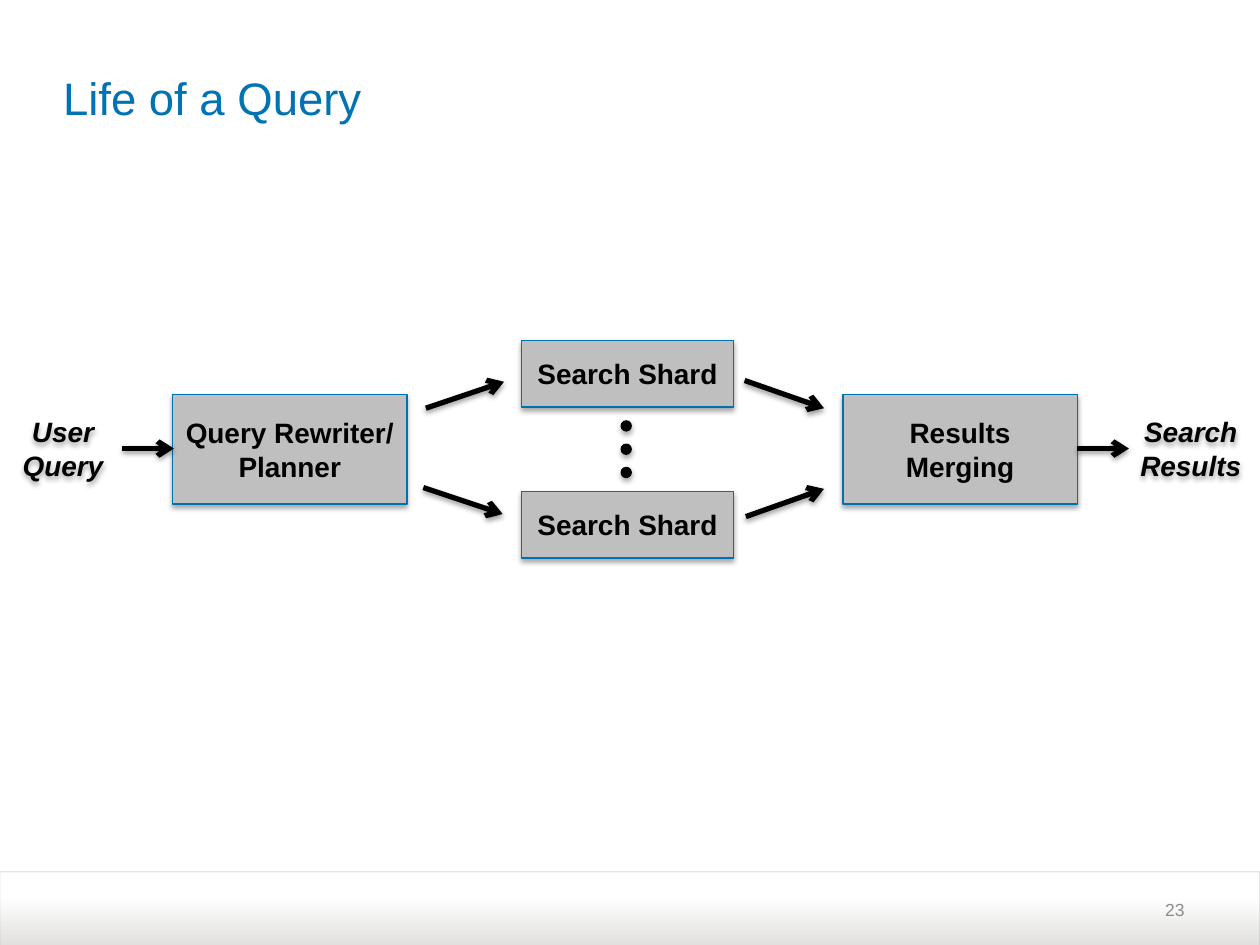
from lxml.etree import SubElement
from pptx import Presentation
from pptx.dml.color import RGBColor
from pptx.enum.shapes import MSO_CONNECTOR, MSO_SHAPE
from pptx.enum.text import MSO_ANCHOR, PP_ALIGN
from pptx.oxml.ns import qn
from pptx.util import Inches, Pt

COLORS = {
    "title": "0073B2",
    "border": "0070AE",
    "box": "BFBFBF",
    "ink": "000000",
    "number": "8C8C8C",
    "footer_dark": "E1E0DF",
    "footer_light": "FFFFFF",
    "footer_line": "A6A6A6",
}
PALETTE = {name: RGBColor.from_string(value) for name, value in COLORS.items()}

deck = Presentation()
deck.slide_width, deck.slide_height = Inches(10), Inches(7.5)
COLUMN = deck.slide_width / 100
ROW = deck.slide_height / 75
page = deck.slides.add_slide(deck.slide_layouts[5])


def grid(left, top, width, height):
    return [round(value * unit) for value, unit in
            zip((left, top, width, height), (COLUMN, ROW, COLUMN, ROW))]


def write(box, lines, size, color, align, bold=False, italic=False):
    frame = box.text_frame
    frame.vertical_anchor = MSO_ANCHOR.MIDDLE
    para = frame.paragraphs[0]
    para.alignment = align
    for index, line in enumerate(lines):
        if index:
            para.add_line_break()
        span = para.add_run()
        span.text = line
        span.font.name = "Arial"
        span.font.size = Pt(size)
        span.font.bold = bold
        span.font.italic = italic
        span.font.color.rgb = PALETTE[color]


footer = page.shapes.add_shape(MSO_SHAPE.ROUND_2_SAME_RECTANGLE, *grid(0, 69.2, 100, 5.9))
footer.adjustments[0] = 0
footer.shadow.inherit = False
footer.fill.gradient()
footer.fill.gradient_angle = 90
for stop, color, position in zip(footer.fill.gradient_stops, ("footer_dark", "footer_light"), (0, 0.68)):
    stop.color.rgb = PALETTE[color]
    stop.position = position
footer.line.color.rgb = PALETTE["footer_line"]
footer.line.width = Pt(0.25)
line_color = footer.line._get_or_add_ln().find(".//" + qn("a:srgbClr"))
SubElement(line_color, qn("a:alpha"), val="79000")

title = page.shapes.title
title.left, title.top, title.width, title.height = grid(5, 2.2, 90, 11)
title.text_frame.margin_left = title.text_frame.margin_right = 0
write(title, ["Life of a Query"], 26, "title", PP_ALIGN.LEFT)

number = page.shapes.add_textbox(*grid(71.7, 70.2, 23.3, 4))
number.text_frame.word_wrap = True
write(number, ["23"], 10, "number", PP_ALIGN.RIGHT)

shadowed = []
stages = [
    (["Query Rewriter/", "Planner"], (13.7, 31.3, 18.6, 8.7)),
    (["Results", "Merging"], (66.9, 31.3, 18.6, 8.7)),
    (["Search Shard"], (41.4, 27, 16.8, 5.3)),
    (["Search Shard"], (41.4, 39, 16.8, 5.3)),
]
for lines, place in stages:
    stage = page.shapes.add_shape(MSO_SHAPE.RECTANGLE, *grid(*place))
    stage.fill.solid()
    stage.fill.fore_color.rgb = PALETTE["box"]
    stage.line.color.rgb = PALETTE["border"]
    stage.line.width = Pt(0.75)
    stage.text_frame.word_wrap = False
    write(stage, lines, 16, "ink", PP_ALIGN.CENTER, bold=True)
    shadowed.append(stage)

for lines, left, width in [(["User", "Query"], 0.3, 9.4), (["Search", "Results"], 89.4, 10.2)]:
    label = page.shapes.add_textbox(*grid(left, 31.4, width, 8.4))
    label.text_frame.word_wrap = False
    write(label, lines, 16, "ink", PP_ALIGN.CENTER, bold=True, italic=True)
    shadowed.append(label)

for index in range(3):
    dot = page.shapes.add_shape(MSO_SHAPE.OVAL, *grid(49.3, 33.4 + 1.85 * index, 0.8, 0.8))
    dot.fill.solid()
    dot.fill.fore_color.rgb = PALETTE["ink"]
    dot.line.color.rgb = PALETTE["ink"]
    dot.line.width = Pt(0.75)
    shadowed.append(dot)

arrows = [
    (9.7, 35.6, 13.8, 35.6),
    (33.8, 32.4, 40, 30.3),
    (33.6, 38.7, 39.9, 40.8),
    (59.1, 30.2, 65.4, 32.4),
    (59.2, 41, 65.4, 38.8),
    (85.5, 35.6, 89.6, 35.6),
]
for ends in arrows:
    arrow = page.shapes.add_connector(MSO_CONNECTOR.STRAIGHT, *grid(*ends))
    arrow.line.color.rgb = PALETTE["ink"]
    arrow.line.width = Pt(3)
    SubElement(arrow.line._get_or_add_ln(), qn("a:tailEnd"), type="arrow")
    shadowed.append(arrow)

for item in shadowed:
    is_arrow = item in shadowed[-len(arrows):]
    effects = SubElement(item._element.spPr, qn("a:effectLst"))
    shadow = SubElement(effects, qn("a:outerShdw"), blurRad=str(Pt(3.1)),
                        dist=str(Pt(1.6 if is_arrow else 1.8)), dir="5400000", rotWithShape="0")
    shade = SubElement(shadow, qn("a:srgbClr"), val=COLORS["ink"])
    SubElement(shade, qn("a:alpha"), val="38000" if is_arrow else "35000")

deck.save("out.pptx")
